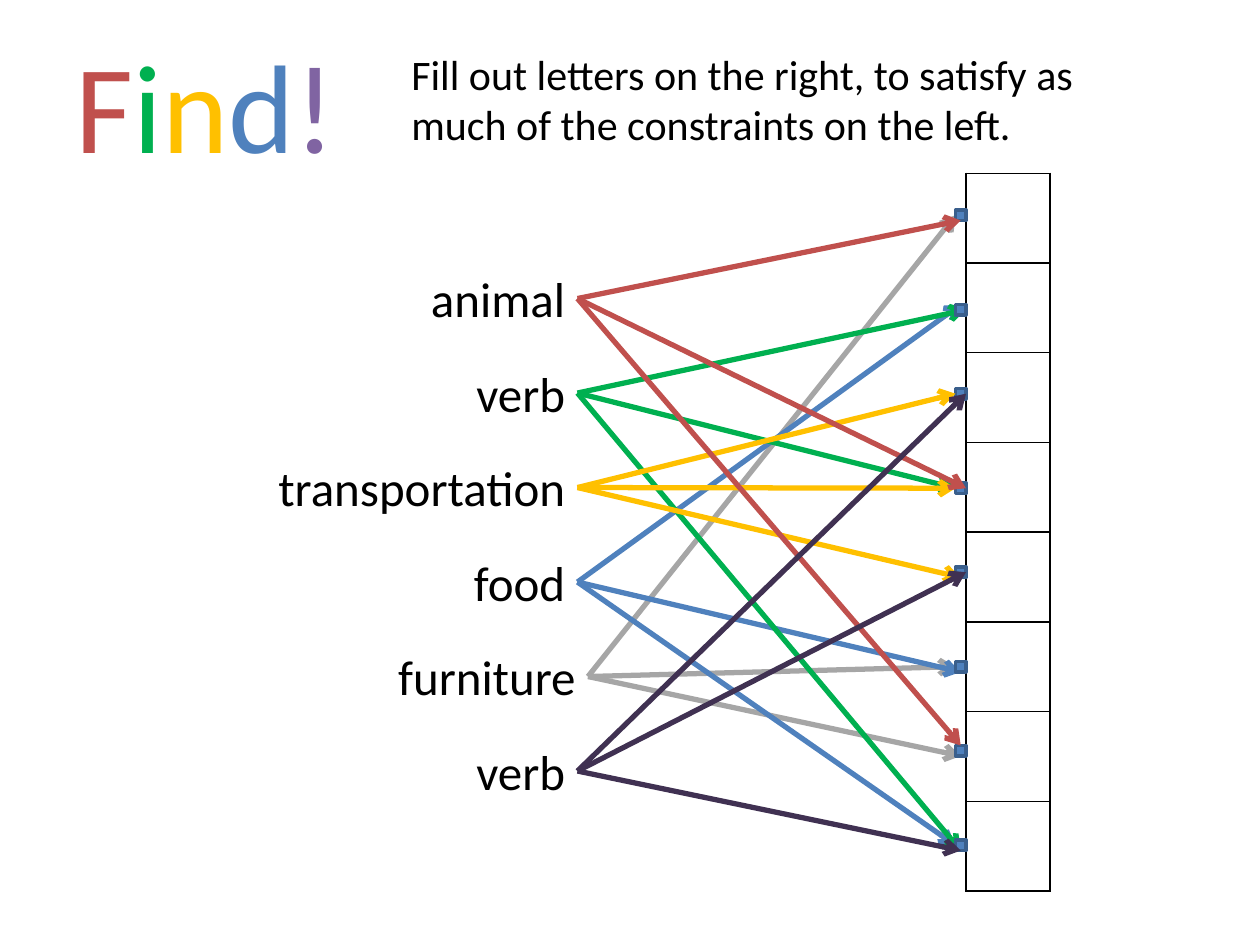
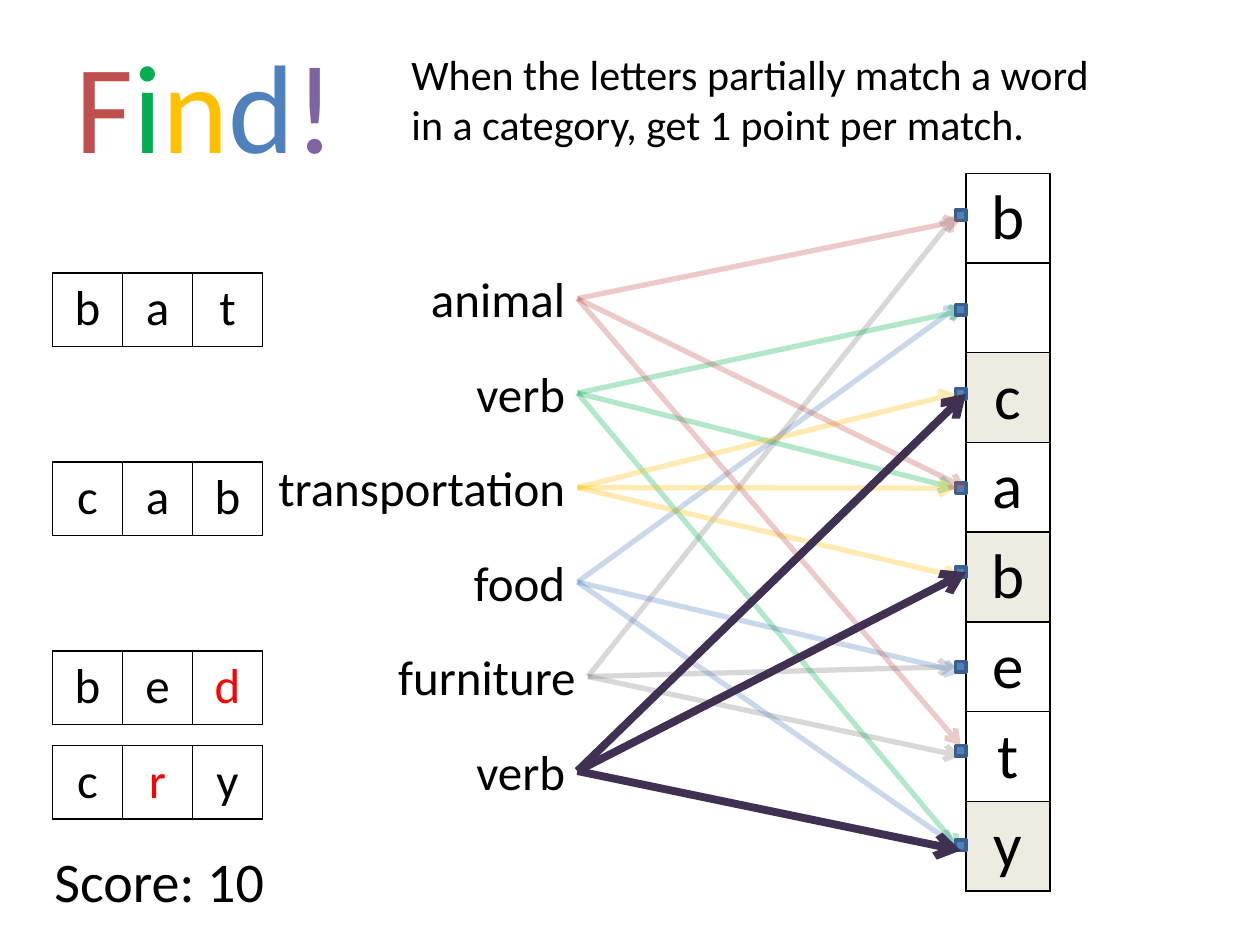
"""Build two slides of the Find! word puzzle: the empty board and a scored one."""
from dataclasses import dataclass
from enum import IntEnum

import lxml.etree
import pptx
import pptx.dml.color
import pptx.enum.shapes
import pptx.enum.text
import pptx.oxml.ns
import pptx.util

RGBColor = pptx.dml.color.RGBColor
Align = pptx.enum.text.PP_ALIGN

BLACK = RGBColor(0x00, 0x00, 0x00)
MISS = RGBColor(0xFF, 0x00, 0x00)
RED = RGBColor(0xC0, 0x50, 0x4D)
GREEN = RGBColor(0x00, 0xB0, 0x50)
GOLD = RGBColor(0xFF, 0xC0, 0x00)
BLUE = RGBColor(0x4F, 0x81, 0xBD)
PURPLE = RGBColor(0x80, 0x64, 0xA2)
DEEP_PURPLE = RGBColor(0x40, 0x31, 0x52)
SILVER = RGBColor(0xA6, 0xA6, 0xA6)
GREY = RGBColor(0x7F, 0x7F, 0x7F)
PORT_EDGE = RGBColor(0x3A, 0x5F, 0x8C)
HIGHLIGHT = RGBColor(0xEE, 0xEC, 0xE1)

FONT = "Calibri"
SLIDE_WIDTH, SLIDE_HEIGHT = pptx.util.Inches(10), pptx.util.Inches(7.5)
GRID_COLUMNS = 120
LETTER_COUNT = 8
PORT_COLUMN, PORT_TOP_ROW, PORT_PITCH = 91, 20, 8.5
CATEGORY_TOP_ROW, CATEGORY_PITCH, CATEGORY_HEIGHT = 25, 9, 6.87


class Side(IntEnum):
    """Connection sites of a rectangle."""

    TOP = 0
    LEFT = 1
    BOTTOM = 2
    RIGHT = 3


@dataclass(frozen=True)
class Area:
    """A rectangle in grid units."""

    column: float
    row: float
    columns: float
    rows: float

    def emu(self) -> tuple[int, ...]:
        """Return left, top, width and height in EMU."""
        unit = SLIDE_WIDTH / GRID_COLUMNS
        return tuple(round(n * unit) for n in (self.column, self.row, self.columns, self.rows))


@dataclass(frozen=True)
class Category:
    """A clue, its place in the list and the letters it points to."""

    name: str
    order: int
    column: int
    color: RGBColor
    targets: tuple[tuple[int, Side], ...]
    right: int = 55
    behind_ports: bool = False

    @property
    def row(self) -> int:
        """Return the top row of the clue."""
        return CATEGORY_TOP_ROW + CATEGORY_PITCH * self.order


@dataclass(frozen=True)
class Guess:
    """A scored word, with the position of its unmatched letter."""

    word: str
    order: int
    miss: int = -1


@dataclass(frozen=True)
class Board:
    """What differs from one slide to the next."""

    prompt: str
    prompt_columns: int
    letters: str = " " * LETTER_COUNT
    highlighted: tuple[int, ...] = ()
    active: int | None = None
    guesses: tuple[Guess, ...] = ()
    score: str = ""


CATEGORIES = (
    Category("furniture", 4, 31, SILVER, ((0, Side.LEFT), (5, Side.LEFT), (6, Side.BOTTOM)), 56, True),
    Category("food", 3, 42, BLUE, ((1, Side.TOP), (5, Side.BOTTOM), (7, Side.LEFT)), behind_ports=True),
    Category("verb", 1, 41, GREEN, ((1, Side.RIGHT), (3, Side.LEFT), (7, Side.BOTTOM)), behind_ports=True),
    Category("transportation", 2, 22, GOLD, ((2, Side.LEFT), (3, Side.LEFT), (4, Side.BOTTOM))),
    Category("animal", 0, 37, RED, ((0, Side.BOTTOM), (3, Side.RIGHT), (6, Side.TOP))),
    Category("verb", 5, 40, DEEP_PURPLE, ((2, Side.RIGHT), (4, Side.RIGHT), (7, Side.BOTTOM))),
)
TITLE = (("F", RED), ("i", GREEN), ("n", GOLD), ("d", BLUE), ("!", PURPLE))
BOARDS = (
    Board("Fill out letters on the right, to satisfy as much of the constraints on the left.", 66),
    Board(
        "When the letters partially match a word in a category, get 1 point per match.",
        70,
        letters="b cabety",
        highlighted=(2, 4, 7),
        active=5,
        guesses=(Guess("bat", 0), Guess("cab", 2), Guess("bed", 4, 2), Guess("cry", 5, 1)),
        score="Score: 10",
    ),
)


def add_xml(parent, tag: str, **attributes: str):
    """Append a child element with the given attributes."""
    return lxml.etree.SubElement(parent, pptx.oxml.ns.qn(tag), **attributes)


def add_run(paragraph, text: str, size: float, color: RGBColor) -> None:
    """Append a styled run."""
    run = paragraph.add_run()
    run.text = text
    run.font.name, run.font.size = FONT, pptx.util.Pt(size)
    run.font.color.rgb = color


def add_label(slide, area: Area, runs, size: float, align=Align.LEFT):
    """Draw a wrapping text box made of coloured runs."""
    label = slide.shapes.add_textbox(*area.emu())
    frame = label.text_frame
    frame.word_wrap = True
    frame.auto_size = pptx.enum.text.MSO_AUTO_SIZE.SHAPE_TO_FIT_TEXT
    frame.paragraphs[0].alignment = align
    for text, color in runs:
        add_run(frame.paragraphs[0], text, size, color)
    return label


def fill_cell(cell, letter: str, size: float, color: RGBColor, shaded: bool) -> None:
    """Give a letter cell its text, black border and fill."""
    paragraph = cell.text_frame.paragraphs[0]
    paragraph.alignment = Align.CENTER
    if letter.strip():
        add_run(paragraph, letter, size, color)
    else:
        end = add_xml(paragraph._p, "a:endParaRPr", sz=str(size * 100))
        add_xml(end, "a:latin", typeface=FONT)
    properties = cell._tc.get_or_add_tcPr()
    for edge in ("a:lnL", "a:lnR", "a:lnT", "a:lnB"):
        border = add_xml(properties, edge, w=str(pptx.util.Pt(1)))
        add_xml(add_xml(border, "a:solidFill"), "a:srgbClr", val=str(BLACK))
    if shaded:
        cell.fill.solid()
        cell.fill.fore_color.rgb = HIGHLIGHT
    else:
        cell.fill.background()


def add_letters(slide, area: Area, letters: str, size: int, vertical=False, shaded=(), miss=-1) -> None:
    """Draw a strip of letter cells, one table cell per letter."""
    rows, columns = (len(letters), 1) if vertical else (1, len(letters))
    table = slide.shapes.add_table(rows, columns, *area.emu()).table
    table.first_row = table.horz_banding = False
    for i, (cell, letter) in enumerate(zip(table.iter_cells(), letters)):
        fill_cell(cell, letter, size, MISS if i == miss else BLACK, i in shaded)


def add_port(slide, index: int):
    """Draw the small square beside a letter."""
    row = PORT_TOP_ROW + int(PORT_PITCH * index + 0.5)
    port = slide.shapes.add_shape(
        pptx.enum.shapes.MSO_SHAPE.RECTANGLE, *Area(PORT_COLUMN, row, 1, 1).emu()
    )
    port.shadow.inherit = False
    port.fill.solid()
    port.fill.fore_color.rgb = BLUE
    port.line.color.rgb = PORT_EDGE
    port.line.width = pptx.util.Pt(2)
    return port


def add_arrow(slide, color: RGBColor, width: float, faded: bool):
    """Draw an arrow whose ends are joined later."""
    arrow = slide.shapes.add_connector(pptx.enum.shapes.MSO_CONNECTOR.STRAIGHT, 0, 0, 0, 0)
    arrow.line.color.rgb = color
    arrow.line.width = pptx.util.Pt(width)
    properties = arrow._element.spPr
    line = properties.find(pptx.oxml.ns.qn("a:ln"))
    if faded:
        add_xml(next(line.iter(pptx.oxml.ns.qn("a:srgbClr"))), "a:alpha", val="30000")
    add_xml(line, "a:tailEnd", type="arrow")
    add_xml(properties, "a:effectLst")
    return arrow


def add_category(slide, category: Category, active: int | None) -> list[tuple]:
    """Draw a clue with its arrows and return the joins still to make."""
    area = Area(category.column, category.row, category.right - category.column, CATEGORY_HEIGHT)
    label = add_label(slide, area, [(category.name, BLACK)], 28, Align.RIGHT)
    faded = active is not None and category.order != active
    color = GREY if faded and category.color == SILVER else category.color
    width = 4.5 if category.order == active else 3
    return [
        (add_arrow(slide, color, width, faded), label, index, side)
        for index, side in category.targets
    ]


def add_puzzle(slide, board: Board) -> None:
    """Draw the letter column, the ports and every clue with its arrows."""
    add_letters(slide, Area(92, 16.5, 8, 67.5), board.letters, 36, True, board.highlighted)
    joins = []
    for category in (c for c in CATEGORIES if c.behind_ports):
        joins += add_category(slide, category, board.active)
    ports = [add_port(slide, i) for i in range(LETTER_COUNT)]
    for category in (c for c in CATEGORIES if not c.behind_ports):
        joins += add_category(slide, category, board.active)
    for arrow, label, index, side in joins:
        arrow.begin_connect(label, Side.RIGHT)
        arrow.end_connect(ports[index], side)


def add_board(presentation, board: Board) -> None:
    """Add one complete slide."""
    slide = presentation.slides.add_slide(presentation.slide_layouts[6])
    add_puzzle(slide, board)
    add_label(slide, Area(6, 2, 31, 15.76), TITLE, 72)
    add_label(slide, Area(38, 4, board.prompt_columns, 10.9), [(board.prompt, BLACK)], 24)
    for guess in board.guesses:
        row = CATEGORY_TOP_ROW + CATEGORY_PITCH * guess.order + 1
        add_letters(slide, Area(5, row, 20, 7), guess.word, 28, miss=guess.miss)
    if board.score:
        add_label(slide, Area(4, 80, 60, 7.66), [(board.score, BLACK)], 32)


def main() -> None:
    """Build and save the presentation."""
    presentation = pptx.Presentation()
    presentation.slide_width, presentation.slide_height = SLIDE_WIDTH, SLIDE_HEIGHT
    for board in BOARDS:
        add_board(presentation, board)
    presentation.save("out.pptx")


if __name__ == "__main__":
    main()
